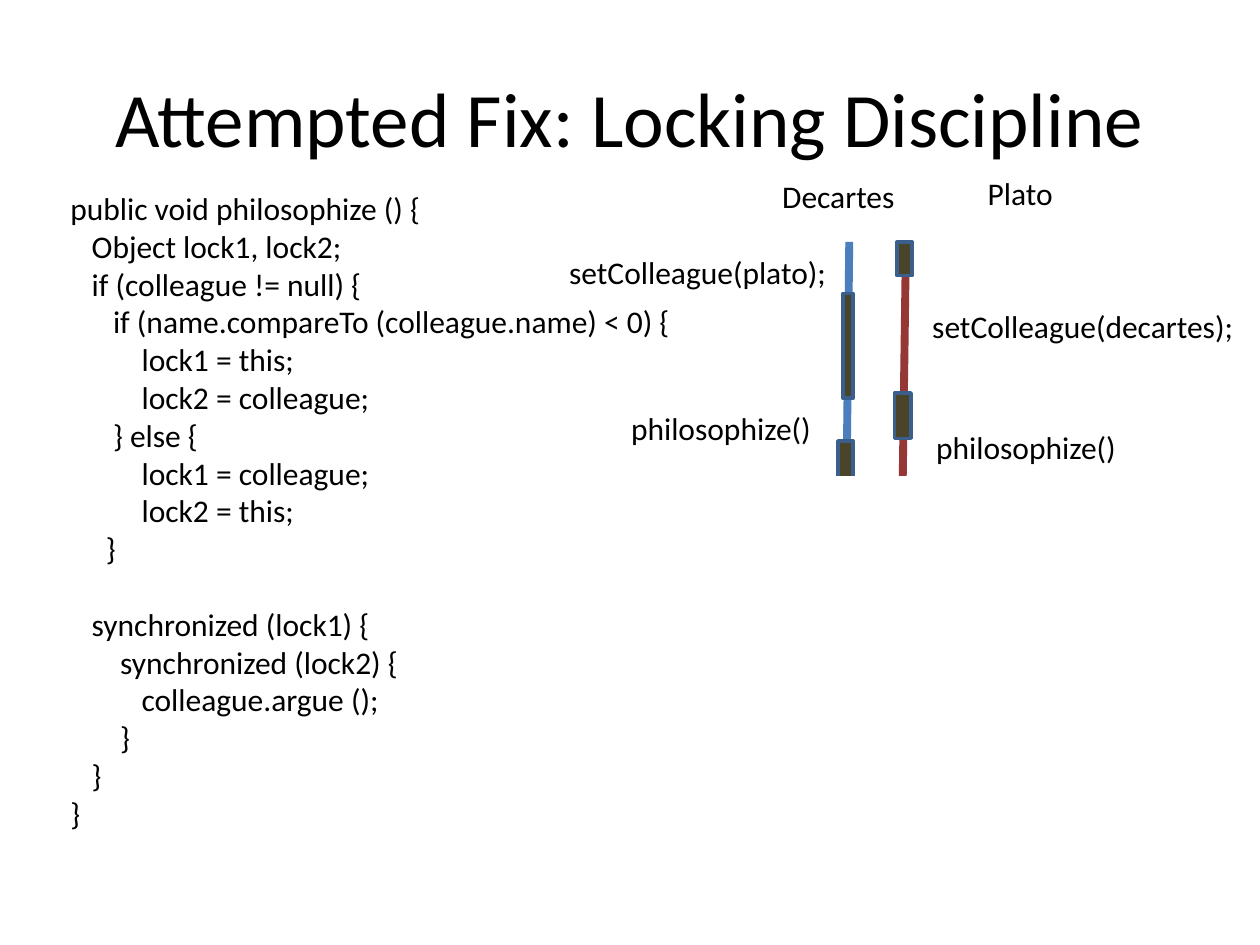
from pptx import Presentation
from pptx.dml.color import RGBColor
from pptx.enum.shapes import MSO_CONNECTOR, MSO_SHAPE
from pptx.enum.text import MSO_ANCHOR, MSO_AUTO_SIZE, PP_ALIGN
from pptx.oxml.ns import qn
from pptx.util import Pt

HUES = {"ink": "000000", "blue": "4B7EBC", "red": "953735",
        "lock": "4A452A", "edge": "3A5F8C", "white": "FFFFFF"}
TITLE = "Attempted Fix: Locking Discipline"
BODY = {"name": "Calibri", "size": Pt(18)}
HEAD = {"name": "Calibri", "size": Pt(44)}
SPACE = 4.07  # width of one space of code
LINE = 21.6  # height of one line of code

# Code: indent in spaces, text, blank lines above
CODE = [
    (0, "public void philosophize () {", 0),
    (3, "Object lock1, lock2;", 0),
    (3, "if (colleague != null) {", 0),
    (6, "if (name.compareTo (colleague.name) < 0) {", 0),
    (10, "lock1 = this;", 0),
    (10, "lock2 = colleague;", 0),
    (6, "} else {", 0),
    (10, "lock1 = colleague;", 0),
    (10, "lock2 = this;", 0),
    (5, "}", 0),
    (3, "synchronized (lock1) {", 1),
    (7, "synchronized (lock2) {", 0),
    (10, "colleague.argue ();", 0),
    (7, "}", 0),
    (3, "}", 0),
    (0, "}", 0),
]
# Labels: text, left, top, width
LABELS = [
    ("Decartes", 439.9, 97.9, 79.2),
    ("Plato", 557.3, 95.8, 51.8),
    ("setColleague(plato);", 318.2, 141.1, 162.7),
    ("setColleague(decartes);", 525.6, 172.1, 188.6),
    ("philosophize()", 353.5, 230.4, 118.8),
    ("philosophize()", 527.8, 241.2, 118.8),
]
# Threads: start x, end x, colour
TOP, END = 138.2, 455.8
THREADS = [(485.3, 481.7, "blue"), (517.7, 513.4, "red")]
# Boxes: left, top, width, height, fill, edge
BOXES = [
    (481.7, 167.8, 5.8, 59.8, "lock", "edge"),
    (478.8, 252, 8.6, 21.6, "lock", "edge"),
    (512.6, 138.2, 8.6, 19.4, "lock", "edge"),
    (511.2, 224.6, 9.4, 25.9, "lock", "edge"),
    (331.2, 272.9, 341.3, 236.9, "white", "white"),  # covers the thread ends
]


def hue(key):
    return RGBColor.from_string(HUES[key])


def style(para, text, look):
    run = para.add_run()
    run.text = text
    for key, val in look.items():
        setattr(run.font, key, val)
    run.font.color.rgb = hue("ink")


def add_text(slide, rect, wrap):
    frame = slide.shapes.add_textbox(*map(Pt, rect)).text_frame
    frame.word_wrap = wrap
    frame.auto_size = MSO_AUTO_SIZE.SHAPE_TO_FIT_TEXT
    return frame


deck = Presentation()
deck.slide_width, deck.slide_height = Pt(720), Pt(540)
slide = deck.slides.add_slide(deck.slide_layouts[5])

# Title
title = slide.shapes.title
spot = {"left": 36, "top": 21.6, "width": 648, "height": 90}
for key, val in spot.items():
    setattr(title, key, Pt(val))
title.text_frame.vertical_anchor = MSO_ANCHOR.MIDDLE
para = title.text_frame.paragraphs[0]
para.alignment = PP_ALIGN.CENTER
style(para, TITLE, HEAD)

# Code
frame = add_text(slide, (33.1, 104.4, 380.9, 378), True)
for i, (indent, text, gap) in enumerate(CODE):
    para = frame.add_paragraph() if i else frame.paragraphs[0]
    para.space_before = Pt(gap * LINE)
    ppr = para._p.get_or_add_pPr()
    ppr.set("marL", str(Pt(indent * SPACE)))
    ppr.set("indent", "0")
    style(para, text, BODY)

# Threads
for x1, x2, tint in THREADS:
    line = slide.shapes.add_connector(
        MSO_CONNECTOR.STRAIGHT, Pt(x1), Pt(TOP), Pt(x2), Pt(END))
    line.line.color.rgb = hue(tint)
    line.line.width = Pt(4.5)
    props = line._element.spPr
    props.append(props.makeelement(qn("a:effectLst"), {}))

# Labels
for text, left, top, width in LABELS:
    frame = add_text(slide, (left, top, width, 28.8), False)
    style(frame.paragraphs[0], text, BODY)

# Held locks and cover
for *rect, fill, edge in BOXES:
    box = slide.shapes.add_shape(MSO_SHAPE.RECTANGLE, *map(Pt, rect))
    box.shadow.inherit = False
    box.fill.solid()
    box.fill.fore_color.rgb = hue(fill)
    box.line.color.rgb = hue(edge)
    box.line.width = Pt(2)

deck.save("out.pptx")
